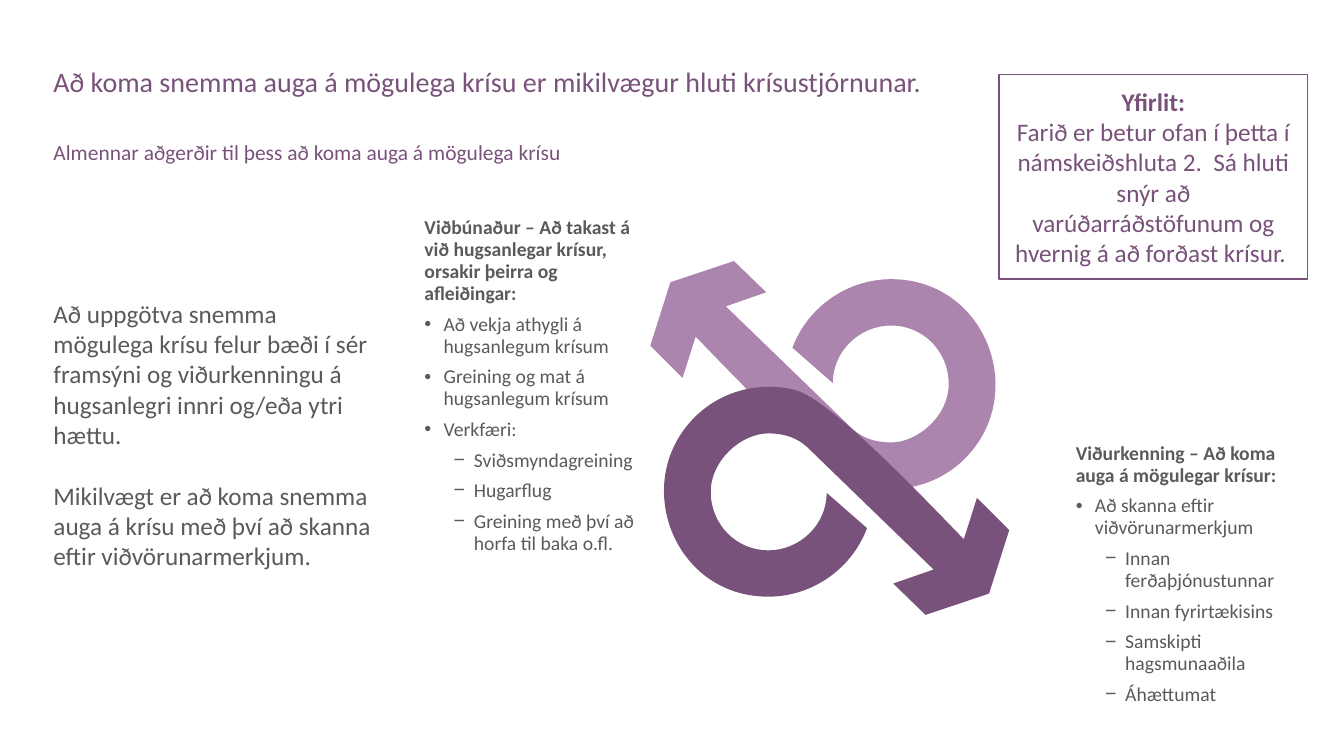
from lxml.etree import SubElement
from pptx import Presentation
from pptx.dml.color import RGBColor
from pptx.enum.shapes import MSO_SHAPE
from pptx.enum.text import MSO_ANCHOR, MSO_AUTO_SIZE, PP_ALIGN
from pptx.oxml.ns import qn
from pptx.util import Pt

PX = 9144  # 100 px to the inch
COLORS = {"plum": "79527B", "lilac": "AB85AD", "gray": "595A59"}
BULLETS = {0: ("•", 19, -19), 1: ("−", 49, -20)}

# Looped arrow: one point makes a straight line, three make a Bézier curve.
ARROW_BOX = (645, 259, 376, 233)
ARROW_START = (957, 455)
ARROW_SEGMENTS = [
    [(931, 481), (893, 491), (857, 482)],
    [(821, 472), (726, 371), (690, 334)],
    [(677, 375)],
    [(645, 343)],
    [(665, 280)],
    [(728, 259)],
    [(760, 290)],
    [(720, 304)],
    [(846, 426)],
    [(855, 434), (867, 439), (884, 439)],
    [(910, 439), (941, 413), (941, 381)],
    [(941, 349), (916, 323), (884, 323)],
    [(852, 323), (826, 349), (826, 380)],
    [(786, 345)],
    [(801, 305), (840, 277), (884, 277)],
    [(978, 277), (1021, 391), (957, 455)],
]

PREPAREDNESS = [
    (0, "Að vekja athygli á hugsanlegum krísum"),
    (0, "Greining og mat á hugsanlegum krísum"),
    (0, "Verkfæri:"),
    (1, "Sviðsmyndagreining"),
    (1, "Hugarflug"),
    (1, "Greining með því að horfa til baka o.fl."),
]
RECOGNITION = [
    (0, "Að skanna eftir viðvörunarmerkjum"),
    (1, "Innan ferðaþjónustunnar"),
    (1, "Innan fyrirtækisins"),
    (1, "Samskipti hagsmunaaðila"),
    (1, "Áhættumat"),
]


def rgb(name):
    return RGBColor.from_string(COLORS[name])


def set_bullet(para, level):
    """Give the paragraph the bullet of its level, or none when level is None."""
    sign, margin, indent = BULLETS.get(level, (None, 0, 0))
    props = para._p.get_or_add_pPr()
    props.set("marL", str(margin * PX))
    props.set("indent", str(indent * PX))
    if sign is None:
        SubElement(props, qn("a:buNone"))
        return
    color = SubElement(props, qn("a:buClr"))
    SubElement(color, qn("a:srgbClr")).set("val", COLORS["gray"])
    SubElement(props, qn("a:buFont")).set("typeface", "Arial")
    SubElement(props, qn("a:buChar")).set("char", sign)


def add_text(frame, text, size=18, color="gray", bold=False, align=PP_ALIGN.LEFT,
             spacing=1.0, before=0, level=None):
    para = frame.paragraphs[0]
    if para.runs:
        para = frame.add_paragraph()
    para.level = level or 0
    set_bullet(para, level)
    para.alignment = align
    para.line_spacing = spacing
    para.space_before = Pt(before)
    para.space_after = Pt(0)
    span = para.add_run()
    span.text = text
    span.font.name = "Calibri"
    span.font.size = Pt(size)
    span.font.bold = bold
    span.font.color.rgb = rgb(color)


def set_frame(frame, anchor=MSO_ANCHOR.TOP, inset_x=10, inset_y=5, fit=MSO_AUTO_SIZE.NONE):
    frame.word_wrap = True
    frame.auto_size = fit
    frame.vertical_anchor = anchor
    frame.margin_left = frame.margin_right = inset_x * PX
    frame.margin_top = frame.margin_bottom = inset_y * PX
    return frame


def move(shape, left, top, width, height):
    shape.left, shape.top = left * PX, top * PX
    shape.width, shape.height = width * PX, height * PX


def place_holder(holder, *place, anchor=MSO_ANCHOR.TOP):
    move(holder, *place)
    return set_frame(holder.text_frame, anchor)


def add_bullet_box(page, left, top, width, height, heading, items):
    box = page.shapes.add_textbox(left * PX, top * PX, width * PX, height * PX)
    frame = set_frame(box.text_frame, inset_x=4, inset_y=2,
                      fit=MSO_AUTO_SIZE.SHAPE_TO_FIT_TEXT)
    add_text(frame, heading, size=14, bold=True, spacing=0.94)
    for level, text in items:
        add_text(frame, text, size=14, spacing=0.94, before=6, level=level)


def draw_outline(arrow, turned):
    """Set the arrow's lines and curves, turned by half a circle if asked."""
    left, top, width, height = ARROW_BOX
    outline = arrow._element.find(".//" + qn("a:path"))
    for child in list(outline):
        outline.remove(child)
    outline.set("w", str(width))
    outline.set("h", str(height))

    def add_step(tag, points):
        step = SubElement(outline, qn(tag))
        for x, y in points:
            x, y = x - left, y - top
            if turned:
                x, y = width - x, height - y
            point = SubElement(step, qn("a:pt"))
            point.set("x", str(x))
            point.set("y", str(y))

    add_step("a:moveTo", [ARROW_START])
    for points in ARROW_SEGMENTS:
        add_step("a:lnTo" if len(points) == 1 else "a:cubicBezTo", points)
    add_step("a:close", [])


def add_arrow(page, left, top, color, turned=False):
    builder = page.shapes.build_freeform(*ARROW_START, scale=PX)
    builder.add_line_segments([points[-1] for points in ARROW_SEGMENTS])
    arrow = builder.convert_to_shape()
    move(arrow, left, top, *ARROW_BOX[2:])
    draw_outline(arrow, turned)
    arrow.shadow.inherit = False
    arrow.fill.solid()
    arrow.fill.fore_color.rgb = rgb(color)
    arrow.line.fill.background()


def add_overview(page, left, top, width, height):
    box = page.shapes.add_shape(MSO_SHAPE.RECTANGLE, left * PX, top * PX,
                                width * PX, height * PX)
    box.shadow.inherit = False
    box.fill.background()
    box.line.color.rgb = rgb("plum")
    box.line.width = Pt(1)
    frame = set_frame(box.text_frame, MSO_ANCHOR.MIDDLE)
    add_text(frame, "Yfirlit:", color="plum", bold=True, align=PP_ALIGN.CENTER)
    add_text(frame, "Farið er betur ofan í þetta í námskeiðshluta 2.  Sá hluti snýr að "
             "varúðarráðstöfunum og hvernig á að forðast krísur. ",
             color="plum", align=PP_ALIGN.CENTER)


def main():
    deck = Presentation()
    deck.slide_width, deck.slide_height = 1333 * PX, 750 * PX
    page = deck.slides.add_slide(deck.slide_layouts[3])
    title, subtitle, summary = page.placeholders

    frame = place_holder(summary, 43, 179, 336, 504, anchor=MSO_ANCHOR.MIDDLE)
    add_text(frame, "Að uppgötva snemma mögulega krísu felur bæði í sér framsýni og "
             "viðurkenningu á hugsanlegri innri og/eða ytri hættu.")
    add_text(frame, "Mikilvægt er að koma snemma auga á krísu með því að skanna "
             "eftir viðvörunarmerkjum.", before=22)
    frame = place_holder(title, 43, 63, 1254, 64)
    add_text(frame, "Að koma snemma auga á mögulega krísu er mikilvægur hluti "
             "krísustjórnunar.", size=20, color="plum", spacing=0.9)
    frame = place_holder(subtitle, 43, 140, 1256, 28)
    add_text(frame, "Almennar aðgerðir til þess að koma auga á mögulega krísu",
             size=15.3, color="plum", spacing=0.7)

    add_arrow(page, 645, 259, "lilac")
    add_arrow(page, 625, 377, "plum", turned=True)

    add_bullet_box(page, 417, 213, 226, 342, "Viðbúnaður – Að takast á við hugsanlegar "
                   "krísur, orsakir þeirra og afleiðingar:", PREPAREDNESS)
    add_bullet_box(page, 1063, 437, 214, 294,
                   "Viðurkenning – Að koma auga á mögulegar krísur:", RECOGNITION)
    add_overview(page, 991, 74, 306, 203)
    deck.save("out.pptx")


if __name__ == "__main__":
    main()
